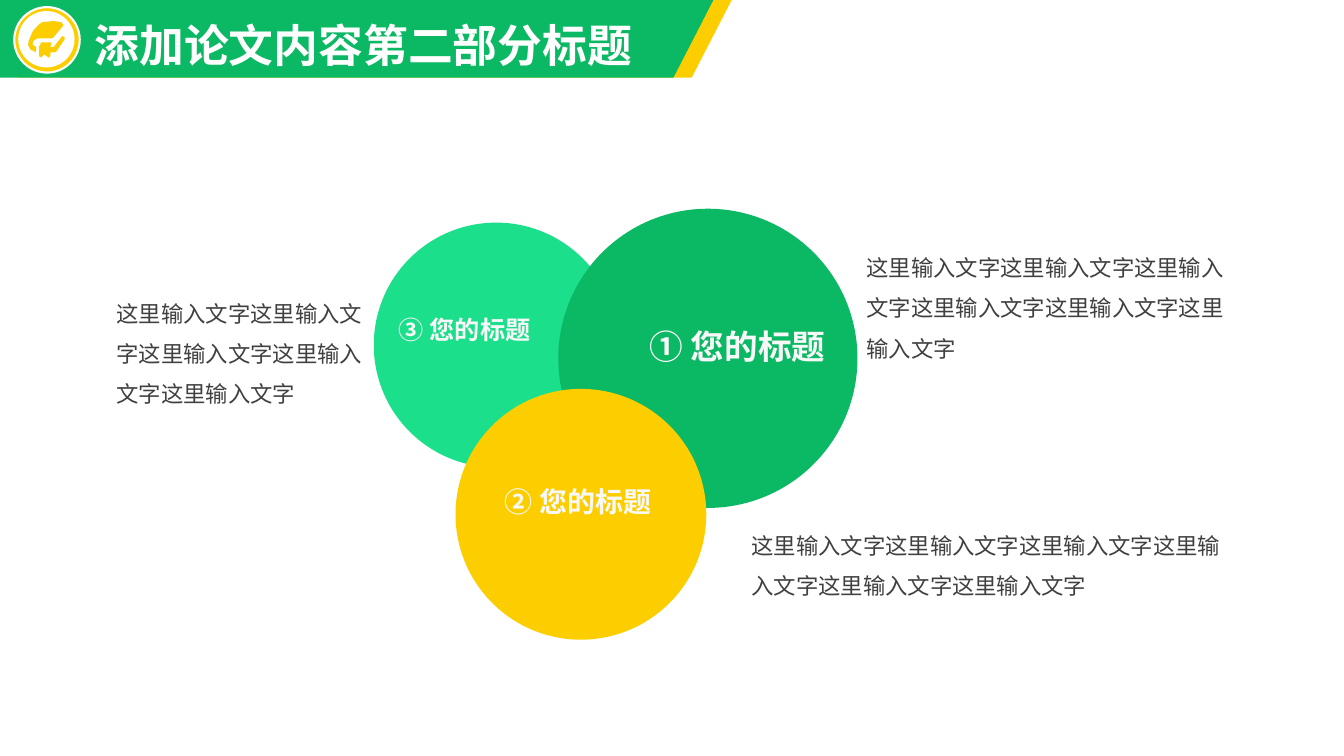
from pptx import Presentation
from pptx.dml.color import RGBColor
from pptx.enum.shapes import MSO_SHAPE
from pptx.enum.text import PP_ALIGN
from pptx.util import Cm, Pt

OVAL = MSO_SHAPE.OVAL
LEFT, CENTER, RIGHT = PP_ALIGN.LEFT, PP_ALIGN.CENTER, PP_ALIGN.RIGHT
FONT = "Arial"
COLORS = {
    "green": "0BB863",
    "mint": "1CDF8B",
    "yellow": "FCCE00",
    "white": "FFFFFF",
    "label": "F8F8F8",
    "body": "404040",
}

TITLE = "添加论文内容第二部分标题"
TITLE_BOX = (2.13, -0.36, 15.85, 2.31)
BAND_TOP_WIDTH, BAND_BOTTOM_WIDTH, BAND_HEIGHT = 17.98, 16.97, 1.96
BANDS = [(0.46, "yellow"), (0, "green")]

BADGE_RINGS = [(0.36, 0.18, 1.65, "yellow", "white"), (0.46, 0.28, 1.42, "white", None)]
DIPLOMA = [
    (1.57, 0.91), (1.63, 0.94), (1.63, 0.99), (1.42, 1.3), (1.37, 1.32), (1.27, 1.32),
    (1.27, 1.42), (1.22, 1.45), (1.12, 1.37), (1.04, 1.45), (0.99, 1.42), (0.99, 1.17),
    (1.04, 1.07), (1.3, 1.07), (1.27, 1.19), (1.35, 1.19),
]
CAP = [
    (1.35, 0.53), (1.55, 0.56), (1.6, 0.64), (1.35, 0.94), (1.3, 0.97), (0.94, 0.97),
    (0.84, 1.03), (0.82, 1.12), (0.91, 1.19), (0.91, 1.32), (0.77, 1.25), (0.71, 1.14),
    (0.72, 1.04), (0.83, 0.78), (0.99, 0.61), (1.07, 0.56),
]

CIRCLES = [
    (9.42, 5.61, 6.17, "mint"),
    (14.07, 5.26, 7.54, "green"),
    (11.48, 9.8, 6.32, "yellow"),
]
LABELS = [
    ("① 您的标题", (13.51, 8.08, 7.54, 1.27), 24, RIGHT),
    ("② 您的标题", (11.48, 12.09, 6.17, 1.12), 20, CENTER),
    ("③ 您的标题", (9.8, 7.8, 5.59, 1.02), 18, LEFT),
]
PHRASE = "这里输入文字"
DESCRIPTIONS = [
    (6, (21.59, 5.94, 9.6, 4.37)),
    (6, (18.69, 12.95, 12.4, 3.33)),
    (5, (2.69, 7.09, 6.75, 3.33)),
]

prs = Presentation()
prs.slide_width, prs.slide_height = Cm(33.87), Cm(19.05)
slide = prs.slides.add_slide(prs.slide_layouts[6])


def rgb(color):
    return RGBColor.from_string(COLORS[color])


def paint(shape, fill, outline=None):
    shape.shadow.inherit = False
    shape.fill.solid()
    shape.fill.fore_color.rgb = rgb(fill)
    if outline:
        shape.line.color.rgb = rgb(outline)
        shape.line.width = Pt(1.5)
    else:
        shape.line.fill.background()


def add_polygon(points, fill):
    corners = [(Cm(x), Cm(y)) for x, y in points]
    builder = slide.shapes.build_freeform(*corners[0])
    builder.add_line_segments(corners[1:])
    paint(builder.convert_to_shape(), fill)


def add_circle(left, top, diameter, fill, outline=None):
    circle = slide.shapes.add_shape(OVAL, Cm(left), Cm(top), Cm(diameter), Cm(diameter))
    paint(circle, fill, outline)


def add_text(text, box, *, size, color, bold=False, align=LEFT, spacing=1.0):
    frame = slide.shapes.add_textbox(*map(Cm, box)).text_frame
    frame.word_wrap = True
    paragraph = frame.paragraphs[0]
    paragraph.alignment = align
    paragraph.line_spacing = spacing
    run = paragraph.add_run()
    run.text = text
    run.font.name = FONT
    run.font.size = Pt(size)
    run.font.bold = bold
    run.font.color.rgb = rgb(color)


for offset, fill in BANDS:
    add_polygon([
        (offset, 0),
        (offset + BAND_TOP_WIDTH, 0),
        (offset + BAND_BOTTOM_WIDTH, BAND_HEIGHT),
        (offset, BAND_HEIGHT),
    ], fill)
add_text(TITLE, TITLE_BOX, size=32, color="white", bold=True, spacing=1.5)

for ring in BADGE_RINGS:
    add_circle(*ring)
for outline_points in (DIPLOMA, CAP):
    add_polygon(outline_points, "yellow")

for circle in CIRCLES:
    add_circle(*circle)
for label, box, size, align in LABELS:
    add_text(label, box, size=size, color="label", bold=True, align=align)
for repeats, box in DESCRIPTIONS:
    add_text(PHRASE * repeats, box, size=16, color="body", spacing=1.5)

prs.save("out.pptx")
